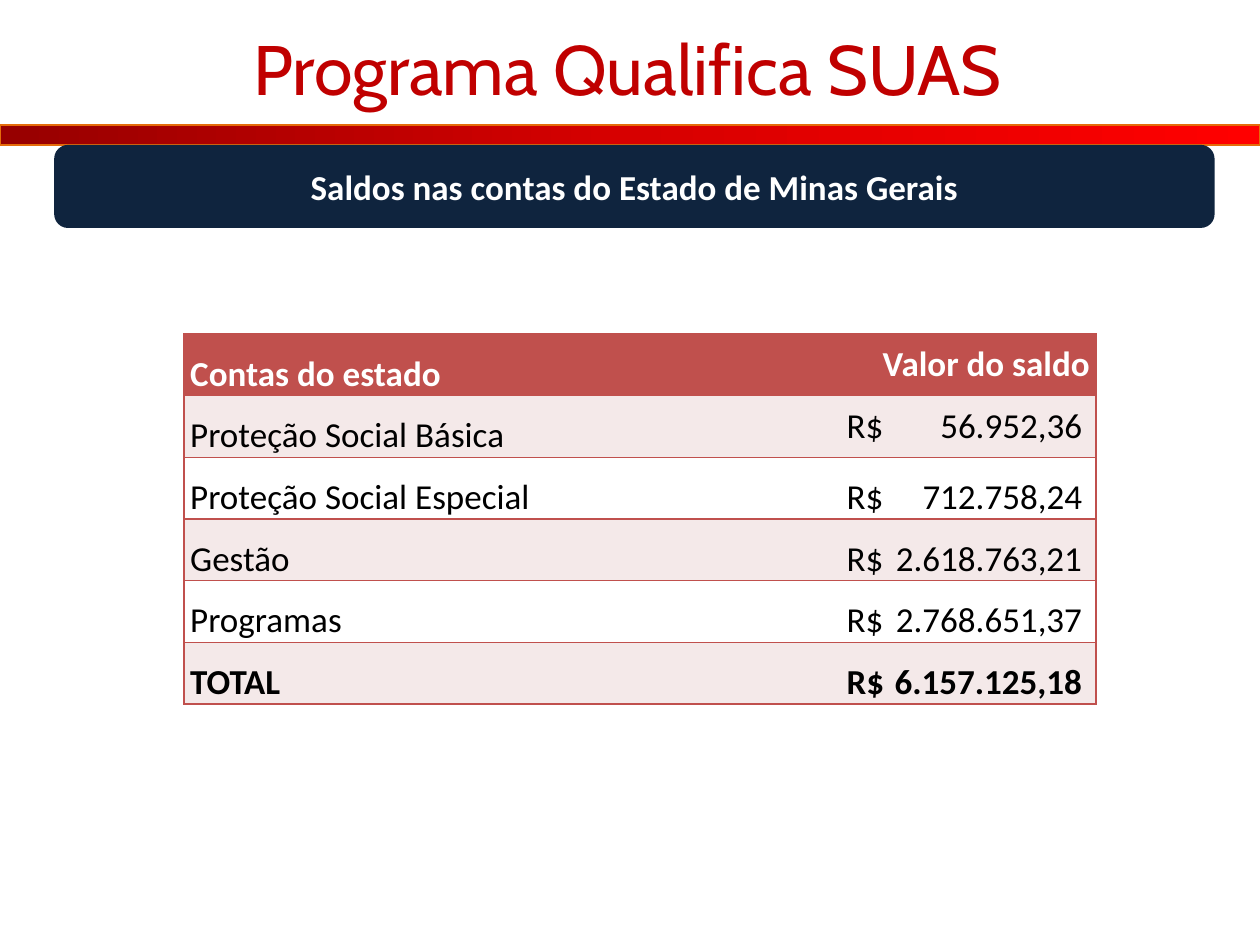
import copy

import pptx
import pptx.dml.color
import pptx.enum.shapes
import pptx.enum.text
import pptx.oxml
import pptx.oxml.ns
import pptx.util
from pptx.util import Inches

RGBColor = pptx.dml.color.RGBColor
Shape = pptx.enum.shapes.MSO_SHAPE
Anchor = pptx.enum.text.MSO_ANCHOR
Align = pptx.enum.text.PP_ALIGN

TITLE_RED = RGBColor(0xC0, 0x00, 0x00)
STRIPE_STOPS = [
    (0, RGBColor(0x97, 0x00, 0x00)),
    (0.5, RGBColor(0xD7, 0x00, 0x00)),
    (1, RGBColor(0xFF, 0x00, 0x00)),
]
STRIPE_EDGE = RGBColor(0xE4, 0x6C, 0x0A)
NAVY = RGBColor(0x0F, 0x24, 0x3E)
TABLE_RED = RGBColor(0xC0, 0x50, 0x4D)
BAND_PINK = RGBColor(0xF4, 0xE9, 0xE9)
WHITE = RGBColor(0xFF, 0xFF, 0xFF)
BLACK = RGBColor(0x00, 0x00, 0x00)

BALANCES = [
    ("Contas do estado", "Valor do saldo"),
    ("Proteção Social Básica", "R$\t56.952,36"),
    ("Proteção Social Especial", "R$\t712.758,24"),
    ("Gestão", "R$\t2.618.763,21"),
    ("Programas", "R$\t2.768.651,37"),
    ("TOTAL", "R$\t6.157.125,18"),
]
COLUMN_WIDTHS = [4.8, 2.44]
ROW_HEIGHT = 0.49


def format_text(frame, size, color, font="Calibri", bold=False, align=Align.LEFT):
    paragraph = frame.paragraphs[0]
    paragraph.alignment = align
    for run in paragraph.runs:
        run.font.size = pptx.util.Pt(size)
        run.font.name = font
        run.font.bold = bold
        run.font.color.rgb = color


def add_title(slide, wording):
    title = slide.shapes.add_textbox(Inches(0), Inches(-0.27), Inches(9.96), Inches(1.61))
    frame = title.text_frame
    frame.word_wrap = True
    frame.vertical_anchor = Anchor.MIDDLE
    frame.text = wording
    format_text(frame, 40, TITLE_RED, font="Cabin", align=Align.CENTER)


def add_stripe(slide):
    stripe = slide.shapes.add_shape(
        Shape.RECTANGLE, Inches(0), Inches(0.99), Inches(10), Inches(0.16))
    stripe.shadow.inherit = False
    stripe.fill.gradient()
    stripe.fill.gradient_angle = 0
    first = stripe.fill._fill._gradFill.gsLst[0]
    first.addnext(copy.deepcopy(first))
    for stop, (position, color) in zip(stripe.fill.gradient_stops, STRIPE_STOPS):
        stop.position = position
        stop.color.rgb = color
    stripe.line.color.rgb = STRIPE_EDGE
    stripe.line.width = pptx.util.Pt(1)


def add_banner(slide, wording):
    banner = slide.shapes.add_shape(
        Shape.ROUNDED_RECTANGLE, Inches(0.43), Inches(1.15), Inches(9.21), Inches(0.66))
    banner.shadow.inherit = False
    banner.fill.solid()
    banner.fill.fore_color.rgb = NAVY
    banner.line.fill.background()
    frame = banner.text_frame
    frame.vertical_anchor = Anchor.MIDDLE
    frame.text = wording
    format_text(frame, 20, WHITE, bold=True, align=Align.CENTER)


def set_borders(cell, hidden_side):
    properties = cell._tc.get_or_add_tcPr()
    for side in ("L", "R", "T", "B"):
        if side == hidden_side:
            paint = "<a:noFill/>"
        else:
            paint = f'<a:solidFill><a:srgbClr val="{TABLE_RED}"/></a:solidFill>'
        properties.append(pptx.oxml.parse_xml(
            f'<a:ln{side} {pptx.oxml.ns.nsdecls("a")} w="12700">{paint}</a:ln{side}>'))


def add_right_tab(paragraph, position):
    properties = paragraph._p.get_or_add_pPr()
    properties.append(pptx.oxml.parse_xml(
        f'<a:tabLst {pptx.oxml.ns.nsdecls("a")}>'
        f'<a:tab pos="{Inches(position)}" algn="r"/></a:tabLst>'))


def fill_cell(cell, wording, row, column):
    is_header = row == 0
    is_amount = column == 1 and not is_header
    set_borders(cell, "L" if column == 1 else "R")
    cell.fill.solid()
    cell.fill.fore_color.rgb = TABLE_RED if is_header else BAND_PINK if row % 2 else WHITE
    cell.margin_left = Inches(0.46 if is_amount else 0.05)
    cell.margin_right = Inches(0.05)
    cell.margin_top = cell.margin_bottom = Inches(0)
    cell.vertical_anchor = Anchor.MIDDLE if column == 1 and row < 2 else Anchor.BOTTOM
    cell.text_frame.text = wording
    if is_amount:
        add_right_tab(cell.text_frame.paragraphs[0], 1.87)
    format_text(
        cell.text_frame, 20, WHITE if is_header else BLACK,
        bold=row in (0, len(BALANCES) - 1),
        align=Align.RIGHT if is_header and column == 1 else Align.LEFT)


def add_balances(slide):
    balances = slide.shapes.add_table(
        len(BALANCES), len(COLUMN_WIDTHS), Inches(1.46), Inches(2.65),
        Inches(sum(COLUMN_WIDTHS)), Inches(ROW_HEIGHT * len(BALANCES))).table
    for column, width in zip(balances.columns, COLUMN_WIDTHS):
        column.width = Inches(width)
    for row, entries in enumerate(BALANCES):
        balances.rows[row].height = Inches(ROW_HEIGHT)
        for column, wording in enumerate(entries):
            fill_cell(balances.cell(row, column), wording, row, column)


def main():
    presentation = pptx.Presentation()
    presentation.slide_width = Inches(10)
    presentation.slide_height = Inches(7.5)
    slide = presentation.slides.add_slide(presentation.slide_layouts[6])
    add_stripe(slide)
    add_title(slide, "Programa Qualifica SUAS")
    add_banner(slide, "Saldos nas contas do Estado de Minas Gerais")
    add_balances(slide)
    presentation.save("out.pptx")


if __name__ == "__main__":
    main()
